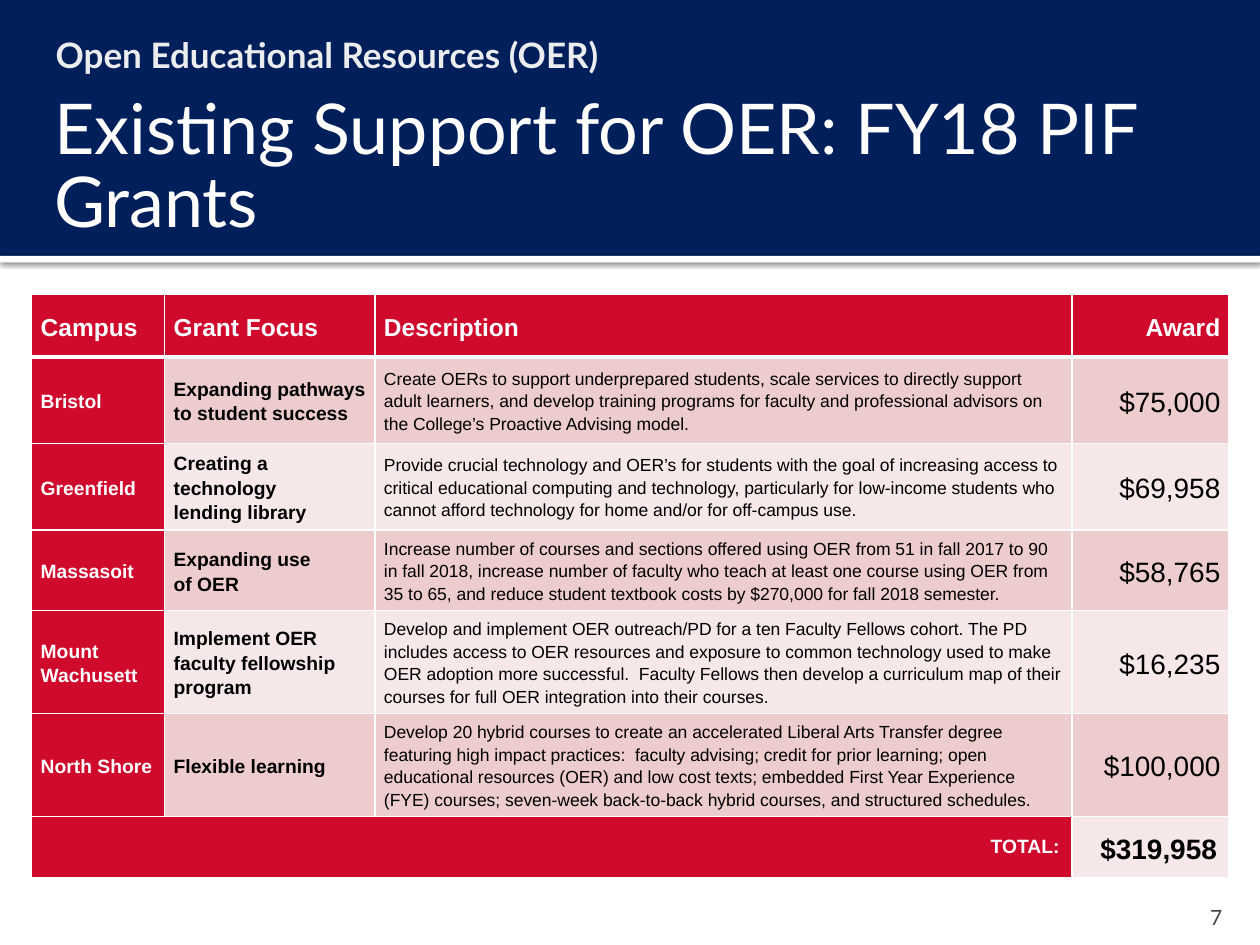
from dataclasses import dataclass

from lxml import etree
from pptx import Presentation
from pptx.dml.color import RGBColor
from pptx.enum.shapes import MSO_SHAPE
from pptx.enum.text import MSO_ANCHOR, MSO_AUTO_SIZE, PP_ALIGN
from pptx.oxml.ns import qn
from pptx.util import Cm, Pt

LEFT, RIGHT = PP_ALIGN.LEFT, PP_ALIGN.RIGHT
TOP, MIDDLE, BOTTOM = MSO_ANCHOR.TOP, MSO_ANCHOR.MIDDLE, MSO_ANCHOR.BOTTOM
NO_AUTOFIT = MSO_AUTO_SIZE.NONE
RECT = MSO_SHAPE.RECTANGLE


@dataclass(frozen=True)
class Theme:
    """Colours, fonts and type sizes of the slide."""
    navy: str = "001F5B"
    red: str = "CF0A2C"
    rose: str = "EDCCCD"
    blush: str = "F6E7E8"
    white: str = "FFFFFF"
    black: str = "000000"
    pale: str = "EAECEE"
    grey: str = "454545"
    heading_font: str = "Lato"
    table_font: str = "Arial"
    title: int = 40
    section: int = 20
    award: int = 16
    header: int = 14
    page: int = 12
    label: int = 11
    detail: int = 10


THEME = Theme()

HEADERS = ["Campus", "Grant Focus", "Description", "Award"]
GRANTS = [
    ("Bristol", "Expanding pathways to student success",
     "Create OERs to support underprepared students, scale services to directly support adult "
     "learners, and develop training programs for faculty and professional advisors on the "
     "College’s Proactive Advising model.", "$75,000"),
    ("Greenfield", "Creating a technology \nlending library",
     "Provide crucial technology and OER’s for students with the goal of increasing access to "
     "critical educational computing and technology, particularly for low-income students who "
     "cannot afford technology for home and/or for off-campus use.", "$69,958"),
    ("Massasoit", "Expanding use \nof OER",
     "Increase number of courses and sections offered using OER from 51 in fall 2017 to 90 in "
     "fall 2018, increase number of faculty who teach at least one course using OER from 35 to "
     "65, and reduce student textbook costs by $270,000 for fall 2018 semester.", "$58,765"),
    ("Mount Wachusett", "Implement OER faculty fellowship program",
     "Develop and implement OER outreach/PD for a ten Faculty Fellows cohort. The PD includes "
     "access to OER resources and exposure to common technology used to make OER adoption more "
     "successful.  Faculty Fellows then develop a curriculum map of their courses for full OER "
     "integration into their courses.", "$16,235"),
    ("North Shore", "Flexible learning",
     "Develop 20 hybrid courses to create an accelerated Liberal Arts Transfer degree featuring "
     "high impact practices:  faculty advising; credit for prior learning; open educational "
     "resources (OER) and low cost texts; embedded First Year Experience (FYE) courses; "
     "seven-week back-to-back hybrid courses, and structured schedules.", "$100,000"),
]
COLUMN_WIDTHS = [2.68, 4.24, 14.05, 3.17]
ROW_HEIGHTS = [1.27, 1.74, 1.74, 1.61, 2.06, 2.07, 1.24]


def rgb(color):
    """Return the colour for a hex string."""
    return RGBColor.from_string(color)


def write(tf, text, size, color, font=THEME.table_font, bold=False, align=LEFT, spacing=None):
    """Write one formatted paragraph, with a line break at each newline."""
    p = tf.paragraphs[0]
    p.alignment = align
    p.space_before = Pt(0)
    p.line_spacing = spacing
    for i, line in enumerate(text.split("\n")):
        if i:
            p.add_line_break()
        r = p.add_run()
        r.text = line
        r.font.name = font
        r.font.size = Pt(size)
        r.font.bold = bold
        r.font.color.rgb = rgb(color)
    return p


def set_frame(sp, box, insets, anchor):
    """Place a text shape and set up its frame."""
    sp.left, sp.top, sp.width, sp.height = map(Cm, box)
    tf = sp.text_frame
    tf.word_wrap = True
    tf.auto_size = NO_AUTOFIT
    tf.vertical_anchor = anchor
    tf.margin_left, tf.margin_top, tf.margin_right, tf.margin_bottom = map(Cm, insets)
    return tf


def add_band(s, top, height, color):
    """Add a full-width band without outline."""
    sp = s.shapes.add_shape(RECT, 0, Cm(top), Cm(25.4), Cm(height))
    sp.shadow.inherit = False
    sp.fill.solid()
    sp.fill.fore_color.rgb = rgb(color)
    sp.line.fill.background()
    return sp


def add_shadow(sp):
    """Give a shape a soft shadow below it."""
    effects = sp.element.spPr.find(qn("a:effectLst"))
    shadow = etree.SubElement(effects, qn("a:outerShdw"), blurRad=str(Pt(2.5)),
                              dist=str(Pt(0.8)), dir="5400000", algn="t", rotWithShape="0")
    color = etree.SubElement(shadow, qn("a:srgbClr"), val=THEME.black)
    etree.SubElement(color, qn("a:alpha"), val="60000")


def add_header(s):
    """Add the navy header with its section line and title."""
    add_band(s, 0, 5.28, THEME.navy)
    add_shadow(add_band(s, 5.16, 0.13, THEME.white))
    title, section = s.shapes.title, s.placeholders[1]
    for sp in (section, title):
        sp.element.getparent().append(sp.element)

    tf = set_frame(section, (0.64, 0.43, 23.72, 1.27), (0.15, 0.25, 0.25, 0.13), TOP)
    p = write(tf, "Open Educational Resources (OER)", THEME.section, THEME.pale,
              font=THEME.heading_font, bold=True)
    pPr = p._p.get_or_add_pPr()
    pPr.set("marL", str(Cm(1.22)))
    pPr.set("indent", str(Cm(-0.89)))
    etree.SubElement(pPr, qn("a:buNone"))

    tf = set_frame(title, (0.84, 1.7, 23.29, 3.38), (0.25, 0.13, 0.13, 0.13), MIDDLE)
    write(tf, "Existing Support for OER: FY18 PIF Grants", THEME.title, THEME.white,
          font=THEME.heading_font, spacing=Pt(42))


def add_page_number(s, number):
    """Add the page number at the bottom right."""
    sp = s.shapes.add_textbox(0, 0, 0, 0)
    tf = set_frame(sp, (22.86, 17.98, 2.03, 0.76), (0.25, 0.13, 0.25, 0), BOTTOM)
    write(tf, number, THEME.page, THEME.grey, font=THEME.heading_font, align=RIGHT)


def style_cell(cell, fill, side=0.18, above=1, below=1):
    """Set the fill, margins and white borders of a cell."""
    cell.fill.solid()
    cell.fill.fore_color.rgb = rgb(fill)
    cell.vertical_anchor = MIDDLE
    cell.margin_left = cell.margin_right = Cm(side)
    cell.margin_top = cell.margin_bottom = Cm(0.13)
    tcPr = cell._tc.get_or_add_tcPr()
    borders = (("a:lnL", 1), ("a:lnR", 1), ("a:lnT", above), ("a:lnB", below))
    for i, (tag, width) in enumerate(borders):
        ln = etree.Element(qn(tag), w=str(Pt(width)))
        line_fill = etree.SubElement(ln, qn("a:solidFill"))
        etree.SubElement(line_fill, qn("a:srgbClr"), val=THEME.white)
        tcPr.insert(i, ln)


def add_grants_table(s):
    """Add the table of grants with its total row."""
    frame = s.shapes.add_table(len(ROW_HEIGHTS), len(COLUMN_WIDTHS), Cm(0.64), Cm(5.93),
                               Cm(sum(COLUMN_WIDTHS)), Cm(sum(ROW_HEIGHTS)))
    table = frame.table
    table.first_row = table.horz_banding = False
    for column, width in zip(table.columns, COLUMN_WIDTHS):
        column.width = Cm(width)
    for row, height in zip(table.rows, ROW_HEIGHTS):
        row.height = Cm(height)

    aligns = [LEFT, LEFT, LEFT, RIGHT]
    for c, text in enumerate(HEADERS):
        cell = table.cell(0, c)
        style_cell(cell, THEME.red, below=3)
        write(cell.text_frame, text, THEME.header, THEME.white, bold=True,
              align=aligns[c], spacing=1.15)

    sizes = [THEME.label, THEME.label, THEME.detail, THEME.award]
    for r, grant in enumerate(GRANTS, 1):
        tint = THEME.rose if r % 2 else THEME.blush
        for c, text in enumerate(grant):
            cell = table.cell(r, c)
            style_cell(cell, tint if c else THEME.red, above=3 if r == 1 else 1)
            write(cell.text_frame, text, sizes[c], THEME.black if c else THEME.white,
                  bold=c < 2, align=aligns[c], spacing=1.15)

    last = len(ROW_HEIGHTS) - 1
    for c in range(len(HEADERS)):
        style_cell(table.cell(last, c), THEME.red if c < 3 else THEME.blush, side=0.25)
    label, total = table.cell(last, 0), table.cell(last, 3)
    label.merge(table.cell(last, 2))
    write(label.text_frame, "TOTAL:", THEME.label, THEME.white, bold=True, align=RIGHT)
    write(total.text_frame, "$319,958", THEME.award, THEME.black, bold=True,
          align=RIGHT, spacing=1.15)


def main():
    """Build the slide and save it."""
    prs = Presentation()
    prs.slide_width, prs.slide_height = Cm(25.4), Cm(19.05)
    s = prs.slides.add_slide(prs.slide_layouts[1])
    add_header(s)
    add_grants_table(s)
    add_page_number(s, "7")
    prs.save("out.pptx")


if __name__ == "__main__":
    main()
